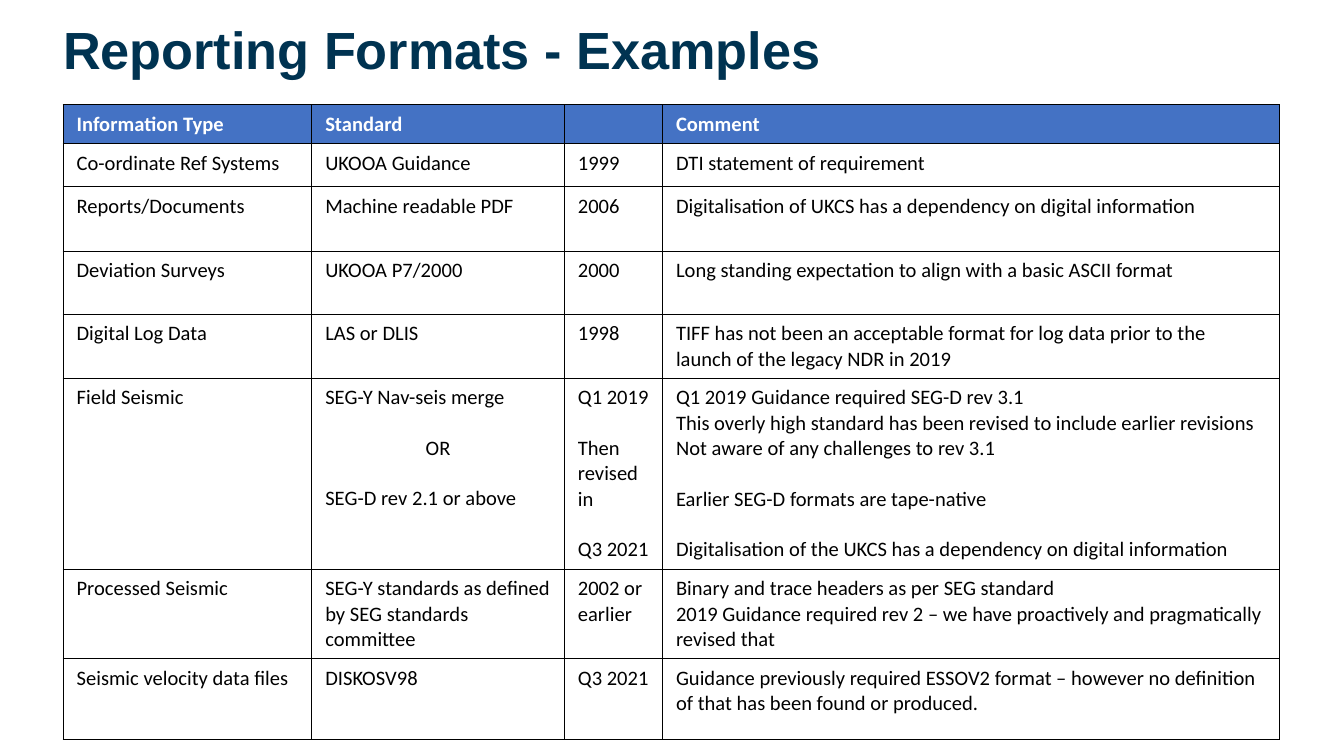
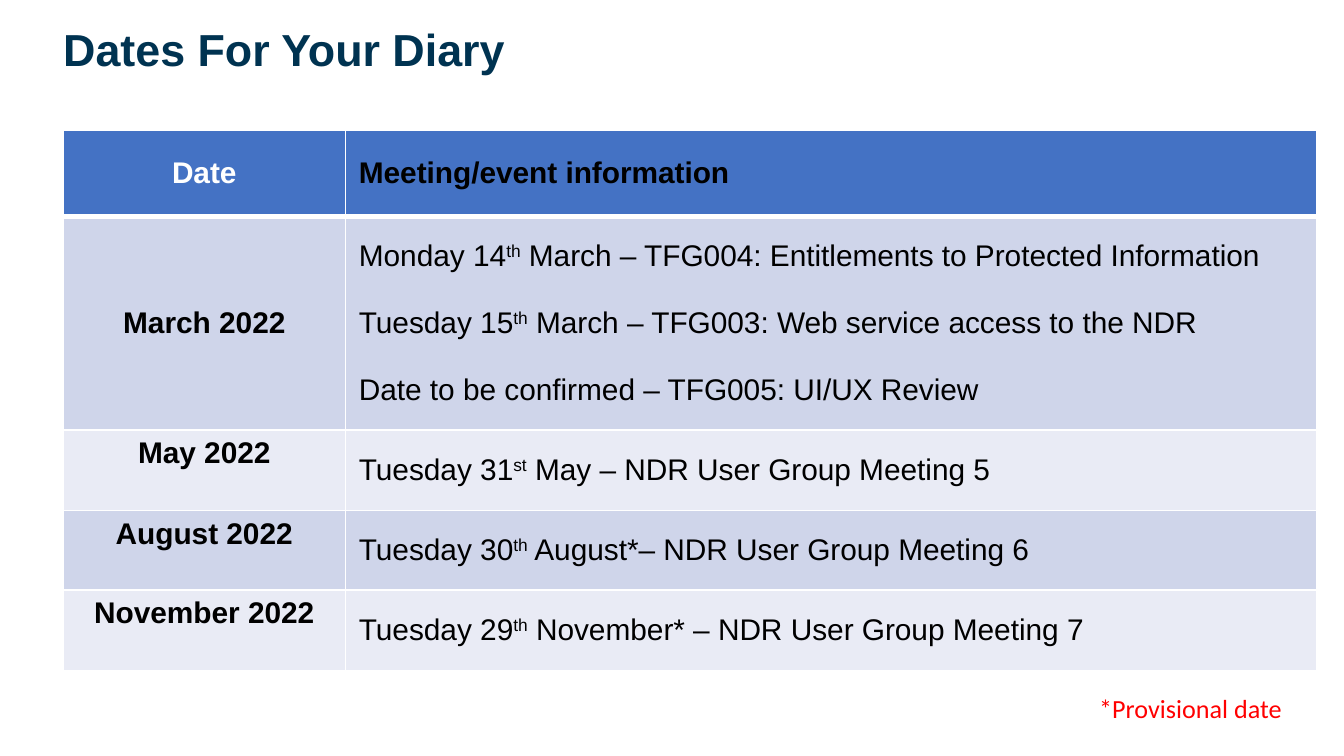
from pptx import Presentation
from pptx.dml.color import RGBColor
from pptx.enum.text import MSO_ANCHOR as Anchor, MSO_AUTO_SIZE as AutoSize, PP_ALIGN as Align
from pptx.oxml import parse_xml
from pptx.oxml.ns import nsdecls
from pptx.util import Inches, Pt

COLOURS = {
    "title": "003351",
    "header": "4472C4",
    "band_dark": "CFD5EA",
    "band_light": "E9EBF5",
    "black": "000000",
    "white": "FFFFFF",
    "note": "FF0000",
}
LEFT = 0.47


def write_text(frame, text, font_name, size, colour, bold=False, gap=0, align=Align.LEFT):
    """Write one paragraph per line; an empty line becomes a gap in points, ^x^ a superscript."""
    paragraph = None
    for block in text.split("\n\n"):
        for index, line in enumerate(block.split("\n")):
            first = paragraph is None
            paragraph = frame.paragraphs[0] if first else frame.add_paragraph()
            paragraph.alignment = align
            paragraph.space_before = Pt(gap if index == 0 and not first else 0)
            paragraph.font.size = Pt(size)
            for part_number, part in enumerate(line.split("^")):
                run = paragraph.add_run()
                run.text = part
                run.font.name = font_name
                run.font.size = Pt(size)
                run.font.bold = bold
                run.font.color.rgb = RGBColor.from_string(COLOURS[colour])
                if part_number % 2:
                    run._r.get_or_add_rPr().set("baseline", "30000")


def add_table(slide, top, widths, heights, border, border_width, header_rule):
    """Add an unbanded table with ruled cells and a filled header row."""
    table = slide.shapes.add_table(
        len(heights), len(widths), Inches(LEFT), Inches(top),
        Inches(sum(widths)), Inches(sum(heights))).table
    table.first_row = table.horz_banding = False
    for column, width in zip(table.columns, widths):
        column.width = Inches(width)
    for row_number, (row, height) in enumerate(zip(table.rows, heights)):
        row.height = Inches(height)
        for cell in row.cells:
            properties = cell._tc.get_or_add_tcPr()
            for position, side in enumerate(("lnL", "lnR", "lnT", "lnB")):
                at_header_rule = (row_number, side) in ((0, "lnB"), (1, "lnT"))
                line_width = header_rule if at_header_rule else border_width
                properties.insert(position, parse_xml(
                    f'<a:{side} {nsdecls("a")} w="{Pt(line_width)}"><a:solidFill>'
                    f'<a:srgbClr val="{COLOURS[border]}"/></a:solidFill></a:{side}>'))
            if row_number == 0:
                cell.fill.solid()
                cell.fill.fore_color.rgb = RGBColor.from_string(COLOURS["header"])
            else:
                cell.fill.background()
    return table


presentation = Presentation()
presentation.slide_width = Inches(10)
presentation.slide_height = presentation.slide_width * 9 // 16

# Titles
slides = []
for text, top, width, size, anchor in (
    ("Reporting Formats - Examples", 0.18, 6.61, 28, Anchor.TOP),
    ("Dates For Your Diary", 0.21, 5.82, 24, Anchor.MIDDLE),
):
    slide = presentation.slides.add_slide(presentation.slide_layouts[5])
    title = slide.shapes.title
    title.left, title.top = Inches(LEFT), Inches(top)
    title.width, title.height = Inches(width), Inches(0.41)
    frame = title.text_frame
    frame.auto_size = AutoSize.NONE
    frame.word_wrap = True
    frame.vertical_anchor = anchor
    frame.margin_left = frame.margin_top = 0
    frame.margin_right, frame.margin_bottom = Inches(0.1), Inches(0.05)
    write_text(frame, text, "Arial", size, "title", bold=True)
    frame.paragraphs[0].line_spacing = 0.9
    slides.append(slide)
formats_slide, dates_slide = slides

# Reporting formats
formats = [
    ("Information Type", "Standard", "", "Comment"),
    ("Co-ordinate Ref Systems", "UKOOA Guidance", "1999", "DTI statement of requirement"),
    ("Reports/Documents", "Machine readable PDF", "2006",
     "Digitalisation of UKCS has a dependency on digital information"),
    ("Deviation Surveys", "UKOOA P7/2000", "2000",
     "Long standing expectation to align with a basic ASCII format"),
    ("Digital Log Data", "LAS or DLIS", "1998",
     "TIFF has not been an acceptable format for log data prior to the "
     "launch of the legacy NDR in 2019"),
    ("Field Seismic", "SEG-Y Nav-seis merge\n\nOR\n\nSEG-D rev 2.1 or above",
     "Q1 2019\n\nThen revised in\n\nQ3 2021",
     "Q1 2019 Guidance required SEG-D rev 3.1\n"
     "This overly high standard has been revised to include earlier revisions\n"
     "Not aware of any challenges to rev 3.1\n\n"
     "Earlier SEG-D formats are tape-native\n\n"
     "Digitalisation of the UKCS has a dependency on digital information"),
    ("Processed Seismic", "SEG-Y standards as defined by SEG standards committee",
     "2002 or earlier",
     "Binary and trace headers as per SEG standard\n"
     "2019 Guidance required rev 2 – we have proactively and pragmatically revised that"),
    ("Seismic velocity data files", "DISKOSV98", "Q3 2021",
     "Guidance previously required ESSOV2 format – however no definition "
     "of that has been found or produced."),
]
formats_table = add_table(
    formats_slide, 0.78, [1.85, 1.88, 0.73, 4.59],
    [0.28, 0.32, 0.48, 0.47, 0.47, 1.42, 0.66, 0.6], "black", 0.75, 0.75)
for row_number, texts in enumerate(formats):
    header = row_number == 0
    for column_number, text in enumerate(texts):
        frame = formats_table.cell(row_number, column_number).text_frame
        if text:
            write_text(frame, text, "Calibri", 11, "white" if header else "black",
                       bold=header, gap=13.5)
        else:
            frame.paragraphs[0].font.size = Pt(11)
formats_table.cell(5, 1).text_frame.paragraphs[1].alignment = Align.CENTER

# Diary dates
dates = [
    ("Date", "Meeting/event information"),
    ("March 2022",
     "Monday 14^th^ March – TFG004: Entitlements to Protected Information\n\n"
     "Tuesday 15^th^ March – TFG003: Web service access to the NDR\n\n"
     "Date to be confirmed – TFG005: UI/UX Review"),
    ("May 2022", "Tuesday 31^st^ May – NDR User Group Meeting 5"),
    ("August 2022", "Tuesday 30^th^ August*– NDR User Group Meeting 6"),
    ("November 2022", "Tuesday 29^th^ November* – NDR User Group Meeting 7"),
]
dates_table = add_table(
    dates_slide, 0.97, [2.1, 7.23], [0.64, 1.59, 0.6, 0.59, 0.6], "white", 1, 3)
for row_number, (month, events) in enumerate(dates):
    header = row_number == 0
    month_cell, events_cell = dates_table.rows[row_number].cells
    month_cell.vertical_anchor = Anchor.MIDDLE if row_number < 2 else Anchor.TOP
    events_cell.vertical_anchor = Anchor.MIDDLE
    write_text(month_cell.text_frame, month, "Arial", 16, "white" if header else "black",
               bold=True, align=Align.CENTER)
    write_text(events_cell.text_frame, events, "Arial", 16, "black", bold=header, gap=18)
    if not header:
        band = "band_dark" if row_number % 2 else "band_light"
        for cell in (month_cell, events_cell):
            cell.fill.solid()
            cell.fill.fore_color.rgb = RGBColor.from_string(COLOURS[band])

# Footnote
note = dates_slide.shapes.add_textbox(Inches(8.08), Inches(5.1), Inches(1.72), Inches(0.34))
note.text_frame.word_wrap = True
note.text_frame.auto_size = AutoSize.SHAPE_TO_FIT_TEXT
write_text(note.text_frame, "*Provisional date", "Calibri", 14, "note")

presentation.save("out.pptx")
